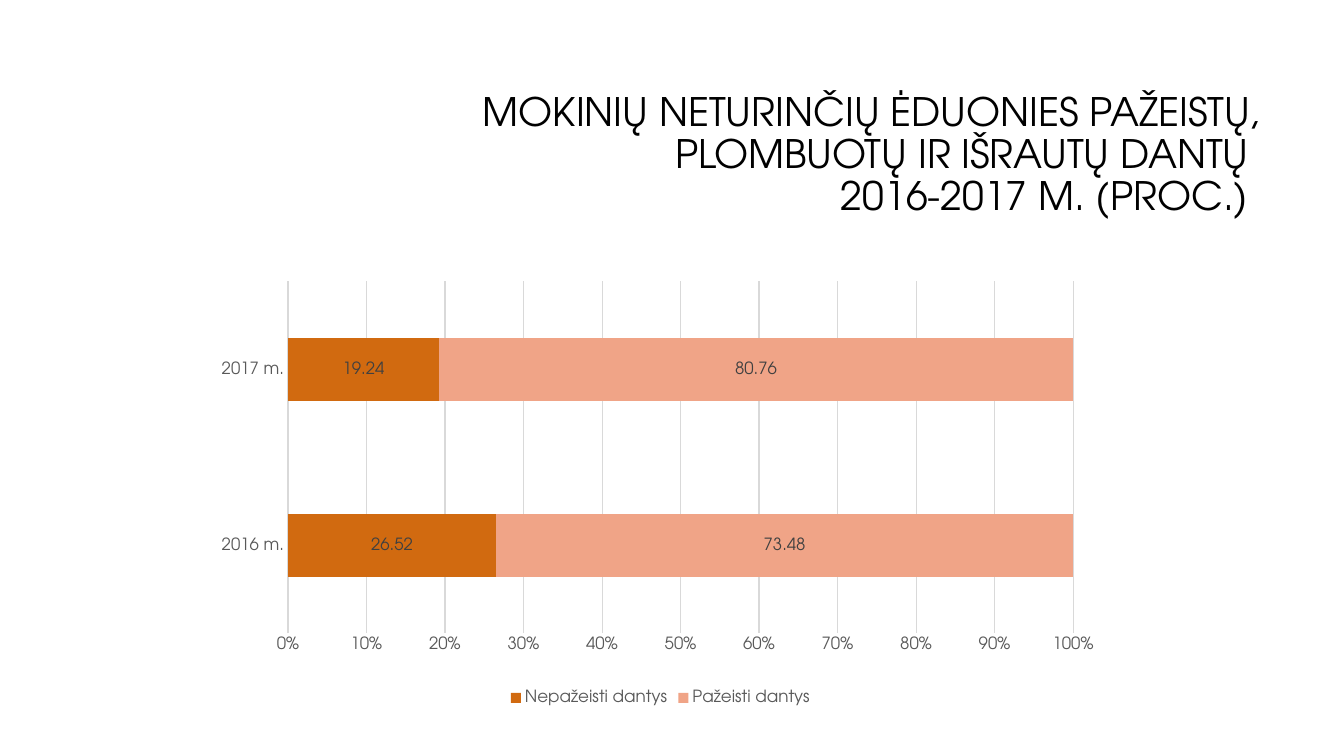
from lxml import etree
from pptx import Presentation
from pptx.chart import data
from pptx.dml.color import RGBColor
from pptx.enum import chart as ch, text
from pptx.oxml import ns
from pptx.util import Pt

FACE = "TeX Gyre Adventor"
BLACK = RGBColor(0x00, 0x00, 0x00)
AXIS_GREY = RGBColor(0x59, 0x59, 0x59)
LABEL_GREY = RGBColor(0x40, 0x40, 0x40)
GRID_GREY = RGBColor(0xD9, 0xD9, 0xD9)
ORANGE = RGBColor(0xD1, 0x6A, 0x10)
SALMON = RGBColor(0xF0, 0xA4, 0x87)

HEADING = "MOKINIŲ NETURINČIŲ ĖDUONIES PAŽEISTŲ, PLOMBUOTŲ IR IŠRAUTŲ DANTŲ \v2016-2017 M. (PROC.) "
YEARS = ["2016 m.", "2017 m."]
TEETH = [
    ("Nepažeisti dantys", [26.52, 19.24], ORANGE),
    ("Pažeisti dantys", [73.48, 80.76], SALMON),
]
PLOT_AREA = {"x": 0.084, "y": 0.035, "w": 0.877, "h": 0.793}


def apply(target, values):
    for name, value in values.items():
        setattr(target, name, value)


def style_font(font, size, color):
    apply(font, {"size": Pt(size), "name": FACE, "bold": False})
    font.color.rgb = color


def style_line(line, color):
    line.color.rgb = color
    line.width = Pt(0.75)


def add_heading(slide):
    frame = slide.shapes.add_textbox(Pt(228), Pt(60.5), Pt(678.5), Pt(101.5)).text_frame
    apply(frame, {"word_wrap": True, "vertical_anchor": text.MSO_ANCHOR.MIDDLE})
    heading = frame.paragraphs[0]
    heading.text = HEADING
    apply(heading, {"alignment": text.PP_ALIGN.RIGHT, "line_spacing": 0.9})
    for run in heading.runs:
        style_font(run.font, 28, BLACK)


def place_plot(chart):
    plot_area = chart.plots[0]._element.getparent()
    for old in plot_area.findall(ns.qn("c:layout")):
        plot_area.remove(old)
    layout = etree.Element(ns.qn("c:layout"))
    manual = etree.SubElement(layout, ns.qn("c:manualLayout"))
    settings = {"layoutTarget": "inner", "xMode": "edge", "yMode": "edge", **PLOT_AREA}
    for tag, value in settings.items():
        etree.SubElement(manual, ns.qn(f"c:{tag}")).set("val", str(value))
    plot_area.insert(0, layout)


def style_axes(chart):
    for axis in (chart.category_axis, chart.value_axis):
        apply(axis, {
            "major_tick_mark": ch.XL_TICK_MARK.NONE,
            "minor_tick_mark": ch.XL_TICK_MARK.NONE,
        })
        style_font(axis.tick_labels.font, 12, AXIS_GREY)
    style_line(chart.category_axis.format.line, GRID_GREY)
    percent = chart.value_axis
    apply(percent, {"minimum_scale": 0, "maximum_scale": 1, "major_unit": 0.1})
    apply(percent.tick_labels, {"number_format": "0%", "number_format_is_linked": False})
    percent.format.line.fill.background()
    style_line(percent.major_gridlines.format.line, GRID_GREY)


def style_series(series, color):
    series.format.fill.solid()
    series.format.fill.fore_color.rgb = color
    labels = series.data_labels
    apply(labels, {"show_value": True, "position": ch.XL_LABEL_POSITION.CENTER})
    style_font(labels.font, 12, LABEL_GREY)


def add_teeth_chart(slide):
    teeth = data.CategoryChartData()
    teeth.categories = YEARS
    for name, values, _ in TEETH:
        teeth.add_series(name, values)
    chart = slide.shapes.add_chart(
        ch.XL_CHART_TYPE.BAR_STACKED_100, Pt(152), Pt(190), Pt(639.5), Pt(317), teeth
    ).chart
    apply(chart, {"has_title": False, "has_legend": True})
    style_font(chart.font, 10, BLACK)
    apply(chart.legend, {
        "position": ch.XL_LEGEND_POSITION.BOTTOM,
        "include_in_layout": False,
    })
    style_font(chart.legend.font, 12, AXIS_GREY)
    bars = chart.plots[0]
    apply(bars, {"gap_width": 182, "overlap": 100, "vary_by_categories": False})
    for series, (_, _, color) in zip(bars.series, TEETH):
        style_series(series, color)
    style_axes(chart)
    place_plot(chart)


def main():
    deck = Presentation()
    apply(deck, {"slide_width": Pt(960), "slide_height": Pt(540)})
    slide = deck.slides.add_slide(deck.slide_layouts[6])
    add_heading(slide)
    add_teeth_chart(slide)
    deck.save("out.pptx")


if __name__ == "__main__":
    main()
